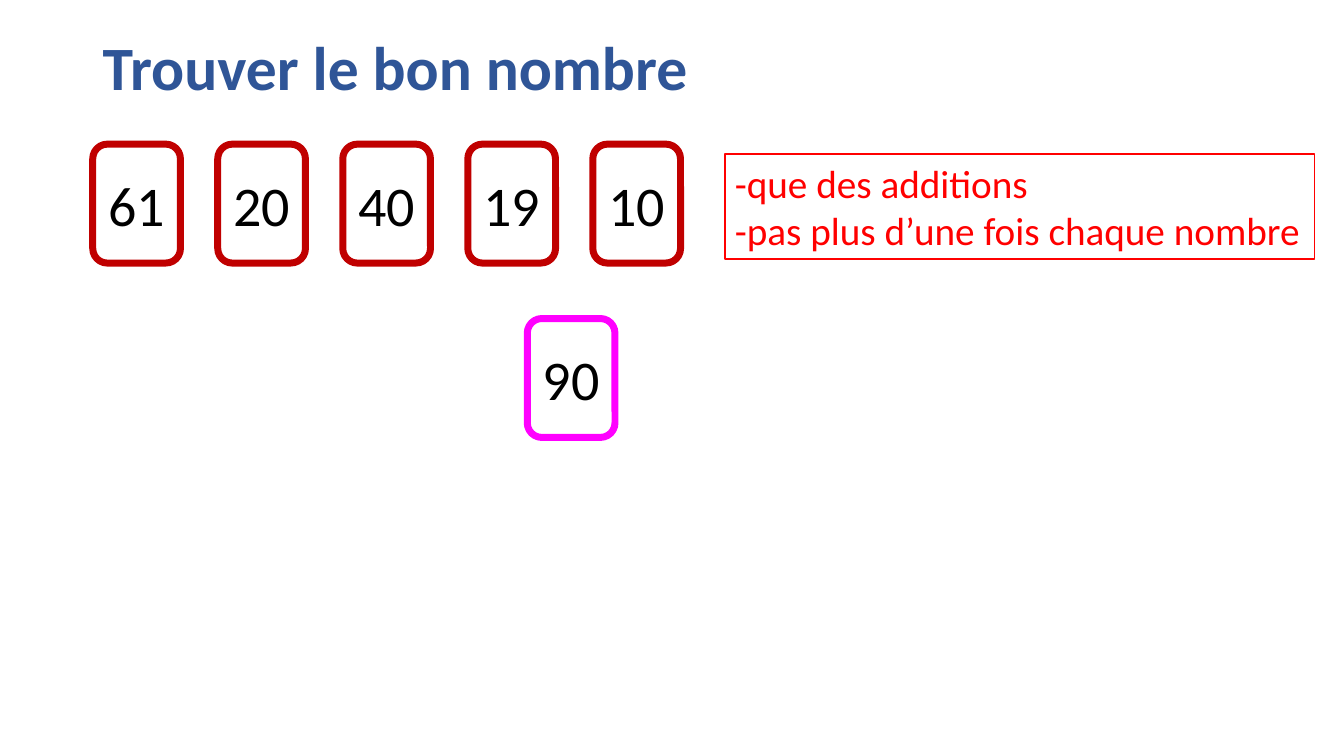
from pptx import Presentation
from pptx.dml.color import RGBColor
from pptx.enum.shapes import MSO_SHAPE
from pptx.enum.text import MSO_ANCHOR, PP_ALIGN
from pptx.util import Inches, Pt

COLORS = {"title": "2F5597", "card": "C00000", "target": "FF00FF",
          "rule": "FF0000", "number": "000000"}
FONT = "Calibri"
CARD_W, CARD_H = 0.87, 1.18
CARD_STEP = 1.24
NUMBERS = ["61", "20", "40", "19", "10"]
TARGET = "90"
RULES = ["-que des additions", "-pas plus d’une fois chaque nombre"]


def rgb(name):
    return RGBColor.from_string(COLORS[name])


def add_run(p, text, size, color, bold=False):
    r = p.add_run()
    r.text = text
    r.font.name = FONT
    r.font.size = Pt(size)
    r.font.bold = bold
    r.font.color.rgb = rgb(color)


def add_outline(slide, kind, box, color, width):
    """Add an unfilled shape with a coloured border."""
    sp = slide.shapes.add_shape(kind, *map(Inches, box))
    sp.shadow.inherit = False
    sp.fill.background()
    sp.line.color.rgb = rgb(color)
    sp.line.width = Pt(width)
    return sp


def add_title(slide, box, text):
    tf = slide.shapes.add_textbox(*map(Inches, box)).text_frame
    tf.word_wrap = True
    tf.vertical_anchor = MSO_ANCHOR.MIDDLE
    p = tf.paragraphs[0]
    p.line_spacing = 0.9
    add_run(p, text, 44, "title", bold=True)


def add_card(slide, left, top, number, color):
    box = (left, top, CARD_W, CARD_H)
    sp = add_outline(slide, MSO_SHAPE.ROUNDED_RECTANGLE, box, color, 5)
    tf = sp.text_frame
    tf.margin_left = tf.margin_right = 0
    tf.word_wrap = False
    tf.vertical_anchor = MSO_ANCHOR.MIDDLE
    p = tf.paragraphs[0]
    p.alignment = PP_ALIGN.CENTER
    add_run(p, number, 40, "number")


def add_card_row(slide, left, top, numbers):
    for i, number in enumerate(numbers):
        add_card(slide, left + i * CARD_STEP, top, number, "card")


def add_rules(slide, box, rules):
    tf = add_outline(slide, MSO_SHAPE.RECTANGLE, box, "rule", 1).text_frame
    tf.word_wrap = True
    tf.vertical_anchor = MSO_ANCHOR.TOP
    for i, rule in enumerate(rules):
        p = tf.add_paragraph() if i else tf.paragraphs[0]
        p.alignment = PP_ALIGN.LEFT
        add_run(p, rule, 28, "rule")


def main():
    prs = Presentation()
    prs.slide_width, prs.slide_height = Inches(13.33), Inches(7.5)
    slide = prs.slides.add_slide(prs.slide_layouts[6])
    add_title(slide, (0.92, 0.27, 11.5, 0.85), "Trouver le bon nombre")
    add_card_row(slide, 0.92, 1.43, NUMBERS)
    add_rules(slide, (7.19, 1.53, 5.85, 1.04), RULES)
    add_card(slide, 5.23, 3.16, TARGET, "target")
    prs.save("out.pptx")


if __name__ == "__main__":
    main()
